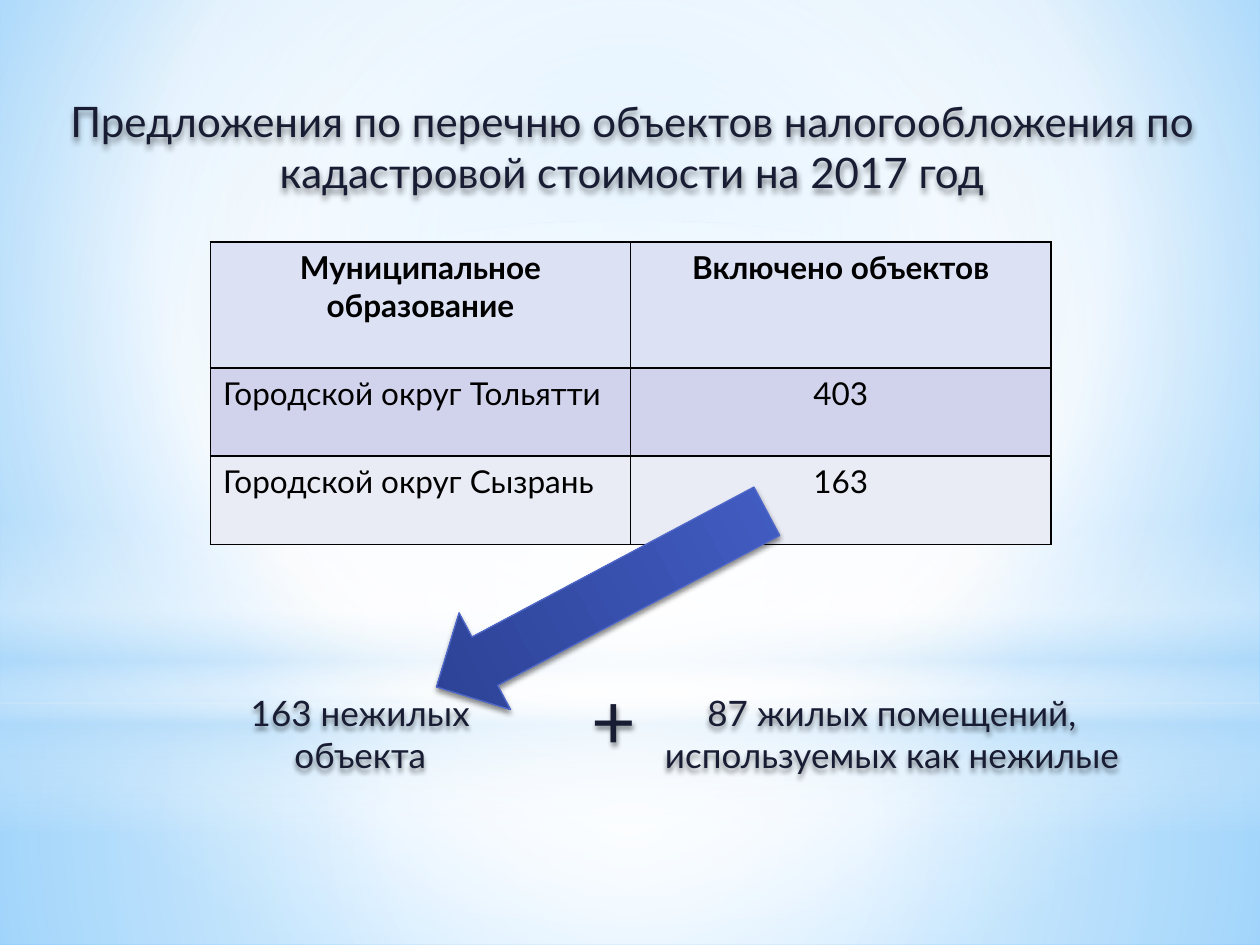
from lxml import etree
from pptx import Presentation
from pptx.dml.color import RGBColor
from pptx.enum.shapes import MSO_SHAPE as Preset
from pptx.enum.text import MSO_ANCHOR as Anchor, PP_ALIGN as Align
from pptx.oxml import parse_xml
from pptx.oxml.ns import nsdecls, qn
from pptx.util import Inches, Pt

FONT = "Lato"
INK = RGBColor(0x19, 0x1D, 0x34)
BLACK = RGBColor(0x00, 0x00, 0x00)
ARROW_LINE = RGBColor(0x4E, 0x67, 0xC8)
ROW_FILLS = [RGBColor(0xDC, 0xE1, 0xF4), RGBColor(0xD0, 0xD3, 0xEB), RGBColor(0xE9, 0xEB, 0xF5)]
CENTRE = (50, 50, 50, 50)


def set_gradient(fill, parent, stops, angle=90, focus=None):
    """Stops are (position, colour, opacity) in percent; focus makes it radial."""
    fill.gradient()
    stop_xml = "".join(
        f'<a:gs pos="{position * 1000}"><a:srgbClr val="{colour}">'
        f'<a:alpha val="{opacity * 1000}"/></a:srgbClr></a:gs>'
        for position, colour, opacity in stops)
    if focus:
        sides = " ".join(f'{side}="{share * 1000}"' for side, share in zip("ltrb", focus))
        direction = f'<a:path path="circle"><a:fillToRect {sides}/></a:path>'
    else:
        direction = f'<a:lin ang="{angle * 60000}" scaled="0"/>'
    parent.replace(parent.find(qn("a:gradFill")), parse_xml(
        f'<a:gradFill {nsdecls("a")} rotWithShape="1"><a:gsLst>{stop_xml}</a:gsLst>'
        f'{direction}</a:gradFill>'))


def add_shadow(shape):
    shape.shadow.inherit = False
    effects = shape._element.spPr.find(qn("a:effectLst"))
    effects.append(parse_xml(
        f'<a:outerShdw {nsdecls("a")} blurRad="{Pt(3.1)}" dist="{Pt(1.8)}" dir="5400000" '
        'rotWithShape="0"><a:srgbClr val="000000"><a:alpha val="45000"/></a:srgbClr></a:outerShdw>'))


deck = Presentation()
deck.slide_width, deck.slide_height = Inches(10), Inches(7.5)
page = deck.slides.add_slide(deck.slide_layouts[5])

# Sky background with soft light panels
background_fill = page.background.fill
background_fill.gradient()
set_gradient(background_fill, page._element.find(".//" + qn("p:bgPr")),
             [(0, "9ED5FF", 100), (60, "FFFFFF", 100), (100, "5BB9FF", 100)],
             focus=(20, 10, 20, 60))
panels = [
    (Preset.RECTANGLE, 5.58, 1.92, CENTRE,
     [(0, "FFFFFF", 91), (37, "FFFFFF", 76), (100, "B4DCFA", 79)]),
    (Preset.RECTANGLE, 0, 5.58, CENTRE,
     [(0, "FFFFFF", 89), (48, "FFFFFF", 62), (100, "B4DCFA", 79)]),
    (Preset.RECTANGLE, 4.12, 2.5, None,
     [(0, "FFFFFF", 0), (29, "FFFFFF", 30), (45, "B4DCFA", 40),
      (55, "FFFFFF", 26), (65, "B4DCFA", 60), (100, "FFFFFF", 0)]),
    (Preset.OVAL, 1.75, 5.58, CENTRE, [(0, "FFFFFF", 100), (56, "FFFFFF", 0)]),
]
for preset, top, height, focus, stops in panels:
    panel = page.shapes.add_shape(preset, 0, Inches(top), Inches(10), Inches(height))
    panel.shadow.inherit = False
    panel.line.fill.background()
    set_gradient(panel.fill, panel._element.spPr, stops, focus=focus)

# Table of municipalities
rows = [
    ("Муниципальное образование", "Включено объектов"),
    ("Городской округ Тольятти", "403"),
    ("Городской округ Сызрань", "163"),
]
table = page.shapes.add_table(3, 2, Inches(1.67), Inches(1.92), Inches(6.67), Inches(2.4)).table
for row, height in zip(table.rows, (1, 0.7, 0.7)):
    row.height = Inches(height)
for row_index, texts in enumerate(rows):
    for column_index, text in enumerate(texts):
        cell = table.cell(row_index, column_index)
        cell.text = text
        para = cell.text_frame.paragraphs[0]
        is_name = row_index > 0 and column_index == 0
        para.alignment = Align.LEFT if is_name else Align.CENTER
        font = para.runs[0].font
        font.name, font.size, font.bold = FONT, Pt(18), row_index == 0
        font.color.rgb = BLACK
        cell.fill.solid()
        cell.fill.fore_color.rgb = ROW_FILLS[row_index]
        properties = cell._tc.get_or_add_tcPr()
        for position, side in enumerate(("lnL", "lnR", "lnT", "lnB")):
            border = etree.Element(qn(f"a:{side}"), w=str(Pt(1)))
            line_fill = etree.SubElement(border, qn("a:solidFill"))
            etree.SubElement(line_fill, qn("a:srgbClr"), val=str(BLACK))
            properties.insert(position, border)

# Title goes above the panels, then the arrow
title = page.shapes.title
page.shapes._spTree.append(title._element)

arrow = page.shapes.add_shape(Preset.DOWN_ARROW, Inches(4.34), Inches(3.27), Inches(0.87), Inches(2.97))
arrow.rotation = 62
arrow.line.color.rgb = ARROW_LINE
arrow.line.width = Pt(0.75)
set_gradient(arrow.fill, arrow._element.spPr, [(0, "435EC5", 100), (100, "2B4092", 100)])
add_shadow(arrow)

# Title and captions share one look
captions = [
    (title, "Предложения по перечню объектов налогообложения по кадастровой стоимости на 2017 год",
     24, 0.32, 0.62, 9.39, 1.08),
    (None, "163 нежилых объекта", 20, 1.36, 5.34, 3, 0.97),
    (None, "87 жилых помещений, используемых как нежилые", 20, 5.13, 5.34, 3.9, 0.97),
    (None, "+", 44, 4.53, 5.38, 0.69, 0.65),
]
for box, text, size, *place in captions:
    left, top, width, height = map(Inches, place)
    if box is None:
        box = page.shapes.add_textbox(left, top, width, height)
    box.left, box.top, box.width, box.height = left, top, width, height
    frame = box.text_frame
    frame.text = text
    frame.word_wrap = True
    frame.vertical_anchor = Anchor.MIDDLE
    para = frame.paragraphs[0]
    para.alignment = Align.CENTER
    font = para.runs[0].font
    font.name, font.size = FONT, Pt(size)
    font.color.rgb = INK
    add_shadow(box)

deck.save("out.pptx")
